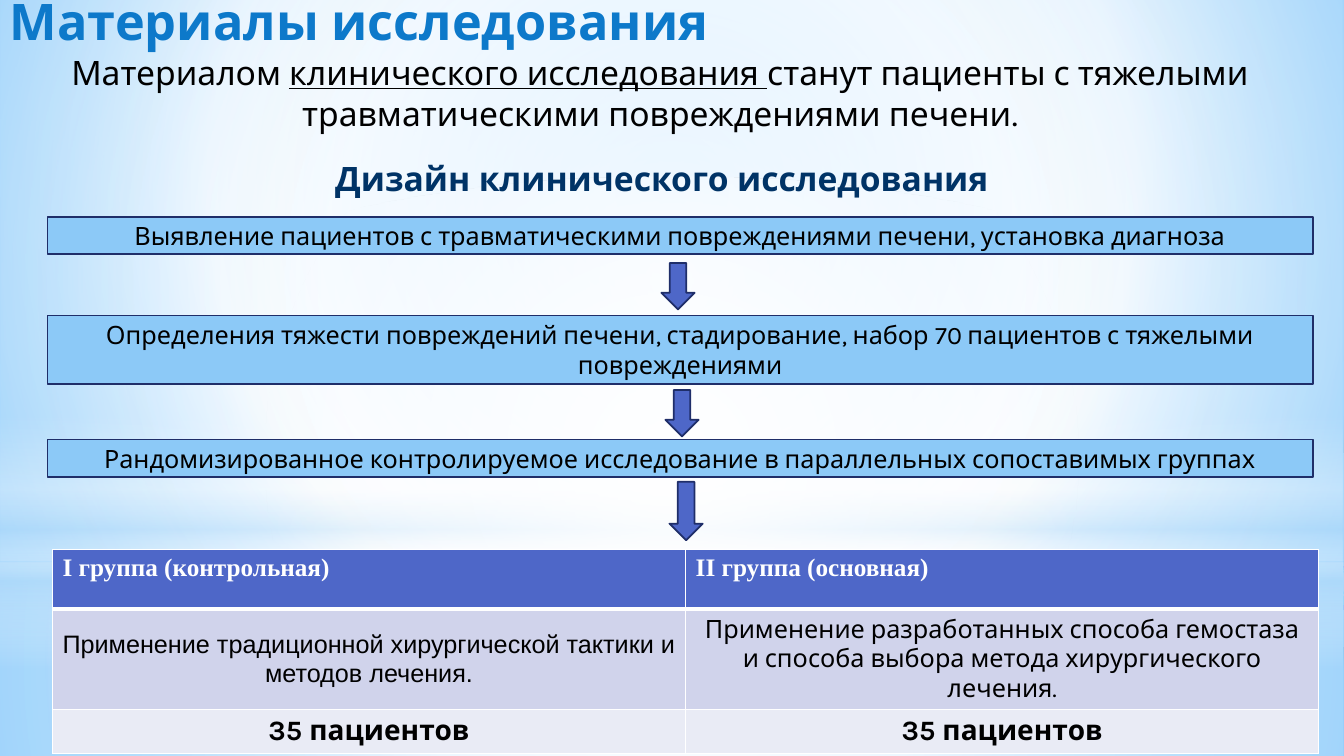
import pptx
import pptx.util
import pptx.dml.color
import pptx.enum.shapes
import pptx.enum.text
import pptx.oxml
import pptx.oxml.ns
from dataclasses import dataclass

Inches = pptx.util.Inches
Pt = pptx.util.Pt
Shape = pptx.enum.shapes.MSO_SHAPE
Align = pptx.enum.text.PP_ALIGN
Anchor = pptx.enum.text.MSO_ANCHOR


@dataclass(frozen=True)
class Theme:
    font: str = "Karla"
    header_font: str = "Times New Roman"
    plain_font: str = "Arial"
    title: str = "0D79CA"
    heading: str = "003366"
    black: str = "000000"
    white: str = "FFFFFF"
    accent: str = "4E67C8"
    outline: str = "1F2E69"
    step: str = "8CC9F7"
    row: str = "D0D3EB"
    total_row: str = "E9EBF5"
    haze: str = "B4DCFA"
    sky_light: str = "9ED5FF"
    sky_deep: str = "5BB9FF"
    title_size: int = 36
    lead_size: int = 24
    total_size: int = 20
    body_size: int = 18


THEME = Theme()
CENTRE = (50, 50, 50, 50)


def rgb(color):
    return pptx.dml.color.RGBColor.from_string(color)


def set_gradient(parent, stops, focus=None):
    stop_xml = "".join(
        f'<a:gs pos="{position * 1000}"><a:srgbClr val="{color}">'
        f'<a:alpha val="{opacity * 1000}"/></a:srgbClr></a:gs>'
        for position, color, opacity in stops)
    if focus:
        left, top, right, bottom = (side * 1000 for side in focus)
        direction = (f'<a:path path="circle"><a:fillToRect l="{left}" t="{top}" '
                     f'r="{right}" b="{bottom}"/></a:path>')
    else:
        direction = '<a:lin ang="5400000" scaled="0"/>'
    gradient = pptx.oxml.parse_xml(
        f'<a:gradFill {pptx.oxml.ns.nsdecls("a")} rotWithShape="1">'
        f'<a:gsLst>{stop_xml}</a:gsLst>{direction}</a:gradFill>')
    parent.replace(parent.find(pptx.oxml.ns.qn("a:solidFill")), gradient)


def add_panel(slide, kind, box, color, outline=None):
    shape = slide.shapes.add_shape(kind, *map(Inches, box))
    shape.shadow.inherit = False
    shape.fill.solid()
    shape.fill.fore_color.rgb = rgb(color)
    if outline:
        shape.line.color.rgb = rgb(outline)
        shape.line.width = Pt(1.25)
    else:
        shape.line.fill.background()
    return shape


def add_glow(slide, kind, top, height, stops, focus=None):
    shape = add_panel(slide, kind, (0, top, 13.33, height), THEME.white)
    set_gradient(shape.element.spPr, stops, focus)


def format_paragraph(paragraph, size, color, font=THEME.font, bold=False, align=Align.CENTER):
    paragraph.alignment = align
    for run in paragraph.runs:
        run.font.name = font
        run.font.size = Pt(size)
        run.font.bold = bold
        run.font.color.rgb = rgb(color)


def add_text(slide, box, parts, size, color, bold=False, align=Align.CENTER):
    frame = slide.shapes.add_textbox(*map(Inches, box)).text_frame
    frame.word_wrap = True
    paragraph = frame.paragraphs[0]
    for text, underline in parts:
        run = paragraph.add_run()
        run.text = text
        run.font.underline = underline
    format_paragraph(paragraph, size, color, bold=bold, align=align)


def add_step(slide, top, height, text):
    shape = add_panel(slide, Shape.RECTANGLE, (0.47, top, 12.55, height), THEME.step, THEME.outline)
    frame = shape.text_frame
    frame.word_wrap = True
    frame.vertical_anchor = Anchor.MIDDLE
    frame.text = text
    format_paragraph(frame.paragraphs[0], THEME.body_size, THEME.black)


def set_borders(cell, top, bottom):
    properties = cell._tc.get_or_add_tcPr()
    for side, width in (("L", 1), ("R", 1), ("T", top), ("B", bottom)):
        properties.append(pptx.oxml.parse_xml(
            f'<a:ln{side} {pptx.oxml.ns.nsdecls("a")} w="{Pt(width)}"><a:solidFill>'
            f'<a:srgbClr val="{THEME.white}"/></a:solidFill></a:ln{side}>'))


def fill_cell(cell, text, background, top, bottom, anchor, **style):
    set_borders(cell, top, bottom)
    cell.fill.solid()
    cell.fill.fore_color.rgb = rgb(background)
    cell.vertical_anchor = anchor
    cell.text_frame.text = text
    format_paragraph(cell.text_frame.paragraphs[0], **style)


def add_groups_table(slide):
    table = slide.shapes.add_table(3, 2, *map(Inches, (0.52, 5.45, 12.57, 1.74))).table
    for row, height in zip(table.rows, (0.59, 0.73, 0.42)):
        row.height = Inches(height)
    header = dict(size=THEME.body_size, color=THEME.white, font=THEME.header_font,
                  bold=True, align=Align.LEFT)
    body = dict(size=THEME.body_size, color=THEME.black)
    total = dict(size=THEME.total_size, color=THEME.black, bold=True)
    groups = (
        ("I группа (контрольная)",
         "Применение традиционной хирургической тактики и методов лечения.", THEME.plain_font),
        ("II группа (основная)",
         "Применение разработанных способа гемостаза и способа выбора метода "
         "хирургического лечения.", THEME.font),
    )
    for column, (name, treatment, font) in enumerate(groups):
        table.columns[column].width = Inches(6.28)
        fill_cell(table.cell(0, column), name, THEME.accent, 1, 3, Anchor.TOP, **header)
        fill_cell(table.cell(1, column), treatment, THEME.row, 3, 1, Anchor.MIDDLE,
                  font=font, **body)
        fill_cell(table.cell(2, column), "35 пациентов", THEME.total_row, 1, 1,
                  Anchor.MIDDLE, **total)


def add_background(slide):
    white, haze = THEME.white, THEME.haze
    slide.background.fill.solid()
    set_gradient(slide.element.find(".//" + pptx.oxml.ns.qn("p:bgPr")),
                 ((0, THEME.sky_light, 100), (60, white, 100), (100, THEME.sky_deep, 100)),
                 (20, 10, 20, 60))
    add_glow(slide, Shape.RECTANGLE, 5.58, 1.92,
             ((0, white, 91), (37, white, 76), (100, haze, 79)), CENTRE)
    add_glow(slide, Shape.RECTANGLE, 0, 5.58,
             ((0, white, 89), (48, white, 62), (100, haze, 79)), CENTRE)
    add_glow(slide, Shape.RECTANGLE, 4.12, 2.5,
             ((0, white, 0), (29, white, 30), (45, haze, 40),
              (55, white, 26), (65, haze, 60), (100, white, 0)))
    add_glow(slide, Shape.OVAL, 1.75, 5.58, ((0, white, 100), (56, white, 0)), CENTRE)


def main():
    presentation = pptx.Presentation()
    presentation.slide_width = Inches(13.33)
    presentation.slide_height = Inches(7.5)
    slide = presentation.slides.add_slide(presentation.slide_layouts[6])
    add_background(slide)

    add_text(slide, (0, -0.15, 13.33, 1.06), [("Материалы исследования", False)],
             THEME.title_size, THEME.title, bold=True, align=Align.LEFT)
    add_text(slide, (0, 0.47, 13.09, 0.91),
             [("Материалом ", False), ("клинического исследования ", True),
              ("станут пациенты с тяжелыми травматическими повреждениями печени.", False)],
             THEME.lead_size, THEME.black)
    add_text(slide, (3.18, 1.52, 6.77, 0.5), [("Дизайн клинического исследования", False)],
             THEME.lead_size, THEME.heading, bold=True)

    add_groups_table(slide)
    steps = (
        (2.15, 0.37, "Выявление пациентов с травматическими повреждениями печени, "
                     "установка диагноза"),
        (3.13, 0.68, "Определения тяжести повреждений печени, стадирование, набор 70 "
                     "пациентов с тяжелыми повреждениями"),
        (4.36, 0.37, "Рандомизированное контролируемое исследование в параллельных "
                     "сопоставимых группах"),
    )
    for step in steps:
        add_step(slide, *step)
    for index, (top, height) in enumerate(((2.61, 0.46), (3.87, 0.46), (4.78, 0.58))):
        add_panel(slide, Shape.DOWN_ARROW, (6.56 + 0.04 * index, top, 0.33, height),
                  THEME.accent, THEME.outline)

    presentation.save("out.pptx")


if __name__ == "__main__":
    main()
